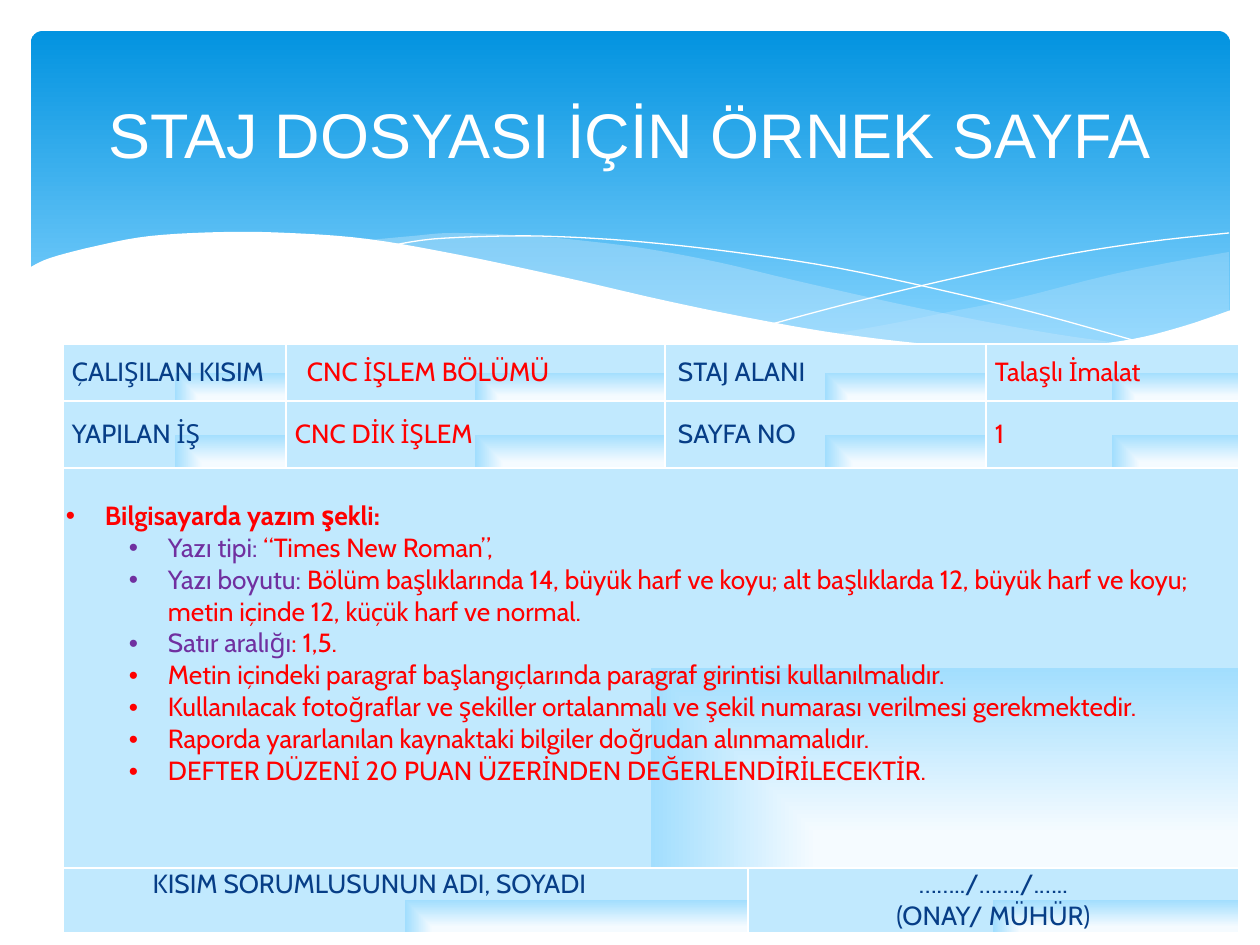
from lxml import etree
from pptx import Presentation
from pptx.dml.color import RGBColor
from pptx.enum.shapes import MSO_SHAPE
from pptx.enum.text import MSO_ANCHOR, PP_ALIGN
from pptx.oxml import parse_xml
from pptx.oxml.ns import qn
from pptx.util import Emu, Pt

SCALE = 914400 / 126
ROUNDED = MSO_SHAPE.ROUNDED_RECTANGLE
MIDDLE, TOP = MSO_ANCHOR.MIDDLE, MSO_ANCHOR.TOP
CENTER, LEFT = PP_ALIGN.CENTER, PP_ALIGN.LEFT

WHITE = RGBColor(0xFF, 0xFF, 0xFF)
SKY_TOP = RGBColor(0x02, 0x93, 0xE0)
SKY_BOTTOM = RGBColor(0x83, 0xD3, 0xFE)
MIST = RGBColor(0xC6, 0xE7, 0xFC)
NAVY = RGBColor(0x07, 0x3E, 0x87)
RED = RGBColor(0xFF, 0x00, 0x00)
PURPLE = RGBColor(0x70, 0x30, 0xA0)
CELL_GLOW = RGBColor(0xF5, 0xFB, 0xFF)
CELL_MID = RGBColor(0xA2, 0xDE, 0xFE)
CELL_EDGE = RGBColor(0xC1, 0xE9, 0xFE)
CELL_STOPS = [(17, CELL_GLOW), (100, CELL_MID), (100, CELL_MID), (100, CELL_EDGE)]

DRAWING_NS = "http://schemas.openxmlformats.org/drawingml/2006/main"
HANGING = 39

RIGHT_WAVE = [
    [(1229, 252), (1178, 261), (1123, 272), (1085, 281), (1014, 299), (949, 312),
     (890, 324), (833, 334)],
    [(833, 334), (888, 341), (954, 348), (1012, 350), (1076, 348), (1130, 340),
     (1178, 330), (1229, 311)],
]
MIDDLE_WAVE = [
    [(1125, 344), (1055, 334), (977, 320), (890, 302), (793, 280), (717, 262),
     (648, 249), (586, 241), (529, 236), (455, 233), (413, 236), (360, 241)],
    [(360, 241), (431, 251), (509, 266), (566, 280), (668, 302), (757, 321),
     (857, 338), (942, 348), (1017, 350), (1080, 349), (1125, 344)],
]
FALLING_LINE = [
    [(389, 246), (433, 239), (505, 236), (567, 237), (643, 242), (733, 252),
     (838, 268), (958, 294), (1047, 316), (1143, 343)],
]
RISING_LINE = [
    [(772, 324), (847, 304), (942, 281), (1053, 257), (1147, 242), (1229, 233)],
]
WHITE_WAVE = [
    [(1231, 310), (1184, 326), (1133, 339), (1071, 347), (1019, 349), (937, 345),
     (842, 334), (760, 320), (667, 301), (563, 277), (460, 255), (368, 239),
     (290, 233), (223, 232), (150, 236), (96, 246), (50, 258), (29, 268)],
    [(29, 415), (1231, 415)],
]

COLUMNS = [223, 379, 9, 238, 253]
ROWS = [57, 67, 400, 62]
MERGES = [(0, 2, 3), (1, 2, 3), (2, 0, 4), (3, 0, 2), (3, 3, 4)]
HEADER_CELLS = [
    (0, 0, "ÇALIŞILAN KISIM", NAVY, 6),
    (0, 1, "CNC İŞLEM BÖLÜMÜ", RED, 18),
    (0, 2, "STAJ ALANI", NAVY, 10),
    (0, 4, "Talaşlı İmalat", RED, 6),
    (1, 0, "YAPILAN İŞ", NAVY, 6),
    (1, 1, "CNC DİK İŞLEM", RED, 6),
    (1, 2, "SAYFA NO", NAVY, 10),
    (1, 4, "1", RED, 6),
]
RULES = [
    [("Yazı tipi: ", PURPLE), ("“Times New Roman”,", RED)],
    [("Yazı boyutu: ", PURPLE),
     ("Bölüm başlıklarında 14, büyük harf ve koyu; alt başlıklarda 12, büyük harf ve "
      "koyu; metin içinde 12, küçük harf ve normal.", RED)],
    [("Satır aralığı", PURPLE), (": 1,5.", RED)],
    [("Metin içindeki paragraf başlangıçlarında paragraf girintisi kullanılmalıdır.", RED)],
    [("Kullanılacak fotoğraflar ve şekiller ortalanmalı ve şekil numarası verilmesi "
      "gerekmektedir.", RED)],
    [("Raporda yararlanılan kaynaktaki bilgiler doğrudan alınmamalıdır.", RED)],
    [("DEFTER DÜZENİ 20 PUAN ÜZERİNDEN DEĞERLENDİRİLECEKTİR.", RED)],
]


def px(length):
    """Turn a length in px into EMU."""
    return Emu(round(length * SCALE))


def smooth(knots, steps=5):
    """Return points on a Catmull-Rom curve through the knots."""
    padded = [knots[0], *knots, knots[-1]]
    points = [knots[0]]
    for a, b, c, d in zip(padded, padded[1:], padded[2:], padded[3:]):
        for step in range(1, steps + 1):
            t = step / steps
            points.append(tuple(
                (2 * q + (r - p) * t + (2 * p - 5 * q + 4 * r - s) * t ** 2
                 + (3 * q - p - 3 * r + s) * t ** 3) / 2
                for p, q, r, s in zip(a, b, c, d)))
    return points


def add_wave(slide, curves, fill=None, opacity=100):
    """Draw joined curves as a filled wave, or as a white hairline without a fill."""
    points = [(px(x), px(y)) for knots in curves for x, y in smooth(knots)]
    builder = slide.shapes.build_freeform(*points[0], scale=1.0)
    builder.add_line_segments(points[1:], close=fill is not None)
    wave = builder.convert_to_shape()
    wave.shadow.inherit = False
    if fill is None:
        wave.fill.background()
        wave.line.color.rgb = WHITE
        wave.line.width = Pt(0)
        return
    wave.line.fill.background()
    wave.fill.solid()
    wave.fill.fore_color.rgb = fill
    if opacity < 100:
        color = wave.fill._xPr.find(".//" + qn("a:srgbClr"))
        etree.SubElement(color, qn("a:alpha"), val=str(opacity * 1000))


def add_banner(slide):
    """Draw the blue gradient banner."""
    banner = slide.shapes.add_shape(ROUNDED, px(31), px(31), px(1199), px(340))
    banner.adjustments[0] = 0.034
    banner.shadow.inherit = False
    banner.line.fill.background()
    banner.fill.gradient()
    banner.fill.gradient_angle = 270
    for stop, color, position in zip(banner.fill.gradient_stops, (SKY_TOP, SKY_BOTTOM), (0, 0.9)):
        stop.color.rgb = color
        stop.position = position


def add_runs(paragraph, runs, size=15, font="Cabin", bold=False):
    """Add coloured runs to a paragraph."""
    for text, color in runs:
        run = paragraph.add_run()
        run.text = text
        for key, value in {"size": Pt(size), "name": font, "bold": bold}.items():
            setattr(run.font, key, value)
        run.font.color.rgb = color


def indent(paragraph, margin, hanging=0):
    """Set the left margin, and a hanging bullet when asked for."""
    properties = paragraph._p.get_or_add_pPr()
    properties.set("marL", str(px(margin)))
    properties.set("indent", str(-px(hanging)))
    if hanging:
        etree.SubElement(properties, qn("a:buFont"), typeface="Arial")
        etree.SubElement(properties, qn("a:buChar"), char="•")


def style_cell(cell):
    """Give a cell its margins, white borders and corner gradient."""
    margins = {"margin_left": 3, "margin_right": 3, "margin_top": 0, "margin_bottom": 0}
    for key, value in margins.items():
        setattr(cell, key, px(value))
    properties = cell._tc.get_or_add_tcPr()
    for side in ("lnL", "lnR", "lnT", "lnB"):
        properties.append(parse_xml(
            f'<a:{side} xmlns:a="{DRAWING_NS}" w="{Pt(1)}"><a:solidFill>'
            f'<a:srgbClr val="{WHITE}"/></a:solidFill></a:{side}>'))
    stops = "".join(f'<a:gs pos="{position * 1000}"><a:srgbClr val="{color}"/></a:gs>'
                    for position, color in CELL_STOPS)
    properties.append(parse_xml(
        f'<a:gradFill xmlns:a="{DRAWING_NS}"><a:gsLst>{stops}</a:gsLst><a:path path="rect">'
        '<a:fillToRect l="100000" t="100000"/></a:path></a:gradFill>'))


def add_form(slide):
    """Add the form table with its borders, fills and merged cells."""
    form = slide.shapes.add_table(len(ROWS), len(COLUMNS), px(63), px(344),
                                  px(sum(COLUMNS)), px(sum(ROWS))).table
    form.first_row = form.horz_banding = False
    for column, width in zip(form.columns, COLUMNS):
        column.width = px(width)
    for row, height in zip(form.rows, ROWS):
        row.height = px(height)
    for cell in form.iter_cells():
        style_cell(cell)
    for row, first, last in MERGES:
        form.cell(row, first).merge(form.cell(row, last))
    return form


def fill_header(form):
    """Write the labels and values of the two header rows."""
    for row, column, text, color, margin in HEADER_CELLS:
        cell = form.cell(row, column)
        cell.vertical_anchor = MIDDLE
        paragraph = cell.text_frame.paragraphs[0]
        indent(paragraph, margin)
        add_runs(paragraph, [(text, color)])


def fill_rules(cell):
    """Write the bulleted writing rules."""
    cell.margin_top = px(32)
    heading = cell.text_frame.paragraphs[0]
    indent(heading, HANGING, HANGING)
    add_runs(heading, [("Bilgisayarda yazım şekli:", RED)], bold=True)
    for runs in RULES:
        rule = cell.text_frame.add_paragraph()
        rule.level = 1
        indent(rule, 102, HANGING)
        add_runs(rule, runs)


def fill_signature(cell, lines):
    """Write centred signature lines."""
    for number, text in enumerate(lines):
        frame = cell.text_frame
        paragraph = frame.add_paragraph() if number else frame.paragraphs[0]
        paragraph.alignment = CENTER
        paragraph.line_spacing = Pt(18.4)
        add_runs(paragraph, [(text, NAVY)])


def add_title(slide, text):
    """Add the centred slide title."""
    frame = slide.shapes.add_textbox(px(63), px(47), px(1134), px(173)).text_frame
    frame.word_wrap = True
    frame.vertical_anchor = MIDDLE
    frame.paragraphs[0].alignment = CENTER
    add_runs(frame.paragraphs[0], [(text, WHITE)], size=36, font="Arial")


def main():
    """Build the sample internship page."""
    deck = Presentation()
    deck.slide_width, deck.slide_height = px(1260), px(945)
    slide = deck.slides.add_slide(deck.slide_layouts[6])
    add_banner(slide)
    add_wave(slide, RIGHT_WAVE, MIST, 29)
    add_wave(slide, MIDDLE_WAVE, MIST, 40)
    add_wave(slide, FALLING_LINE)
    add_wave(slide, RISING_LINE)
    add_wave(slide, WHITE_WAVE, WHITE)
    form = add_form(slide)
    fill_header(form)
    fill_rules(form.cell(2, 0))
    fill_signature(form.cell(3, 0), ["KISIM SORUMLUSUNUN ADI, SOYADI"])
    form.cell(3, 0).margin_right = px(75)
    fill_signature(form.cell(3, 3), ["……../……./.…..", "(ONAY/ MÜHÜR)"])
    add_title(slide, "STAJ DOSYASI İÇİN ÖRNEK SAYFA")
    deck.save("out.pptx")


if __name__ == "__main__":
    main()
